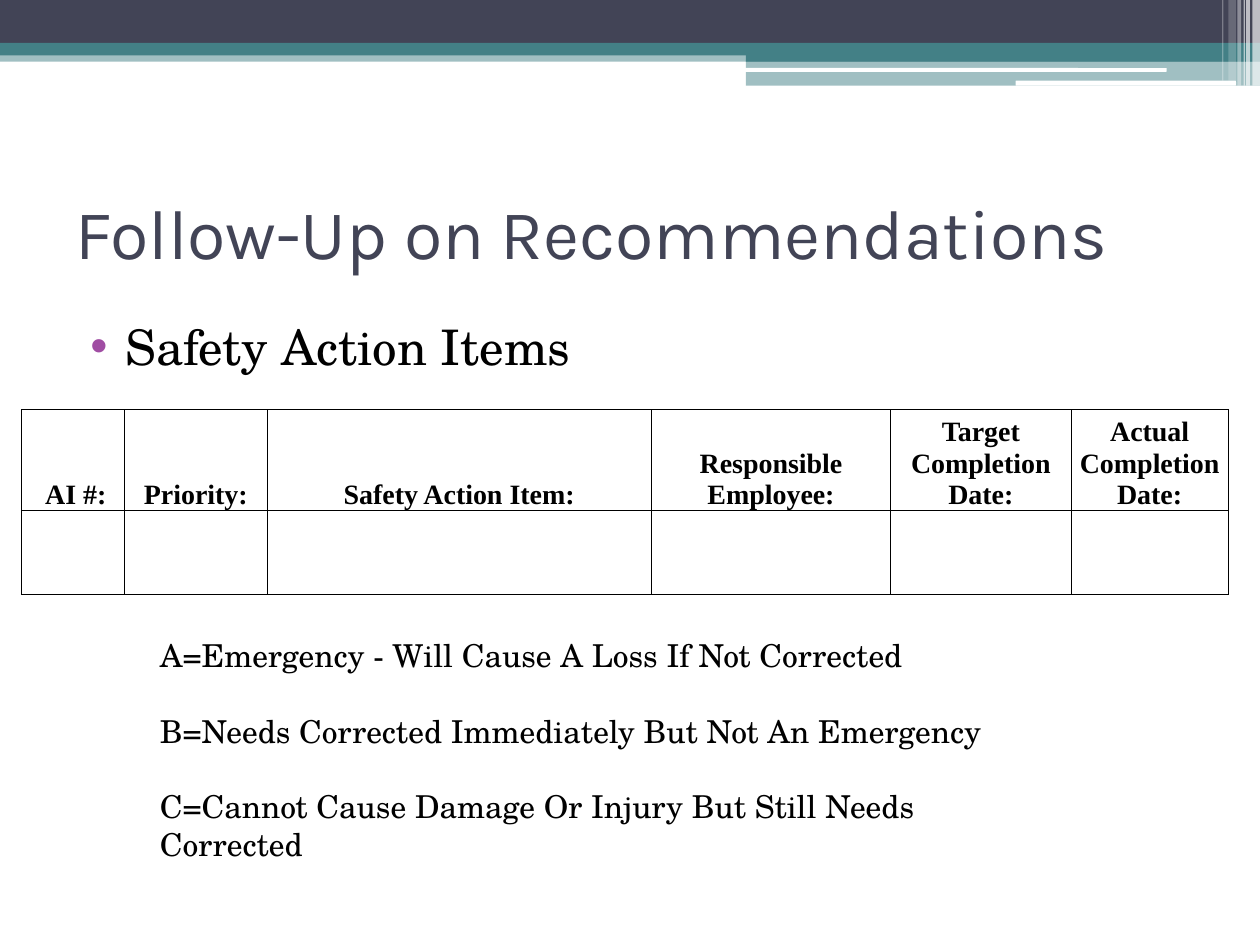
from dataclasses import dataclass

from pptx import Presentation
from pptx import util as u
from pptx.dml.color import RGBColor
from pptx.enum import shapes, text
from pptx.oxml.ns import qn
from lxml import etree


@dataclass(frozen=True)
class Theme:
    navy: str = "424456"
    teal: str = "438086"
    purple: str = "A04DA3"
    white: str = "FFFFFF"
    black: str = "000000"
    heading: str = "Karla"
    body: str = "TeX Gyre Schola"
    grid: str = "Times New Roman"
    title_size: int = 40
    topic_size: int = 28
    note_size: int = 18
    header_size: int = 16
    border: float = 0.5


THEME = Theme()
COLUMNS, ROWS = 100, 75
BANNER = [
    (0, 4, 100, 0.9, THEME.teal, 50),
    (0, 0, 100, 3.4, THEME.navy, 100),
    (0, 3.4, 100, 1, THEME.teal, 100),
    (59.2, 3.9, 40.8, 1, THEME.teal, 100),
    (59.2, 4.8, 40.8, 2, THEME.teal, 50),
]
HIGHLIGHTS = [(59.1, 5.4, 33.5, 0.3), (80.6, 6.4, 17.5, 0.4)]
STRIPES = [
    (99.4, 0.6, 6.8, 65),
    (98.9, 0.3, 6.8, 65),
    (98.7, 0.1, 6.8, 60),
    (98.2, 0.3, 6.8, 40),
    (97.5, 0.6, 6.4, 20),
    (97, 0.1, 6.4, 30),
]
ACTION_FIELDS = {
    " AI #:": 8.2,
    "Priority:": 11.3,
    "Safety Action Item:": 30.5,
    "Responsible Employee:": 19,
    "Target Completion Date:": 14.3,
    "Actual Completion Date:": 12.5,
}
PRIORITIES = [
    "A=Emergency - Will Cause A Loss If Not Corrected",
    "B=Needs Corrected Immediately But Not An Emergency",
    "C=Cannot Cause Damage Or Injury But Still Needs Corrected",
]


def apply(target, values):
    for name, value in values.items():
        setattr(target, name, value)


def add_node(parent, tag, **attributes):
    return etree.SubElement(parent, qn(tag), attributes)


class SlideBuilder:
    def __init__(self, theme):
        self.theme = theme
        self.deck = Presentation()
        apply(self.deck, {"slide_width": u.Inches(10), "slide_height": u.Inches(7.5)})
        self.slide = self.deck.slides.add_slide(self.deck.slide_layouts[5])

    def across(self, columns):
        return round(self.deck.slide_width * columns / COLUMNS)

    def down(self, rows):
        return round(self.deck.slide_height * rows / ROWS)

    def area(self, left, top, width, height):
        return self.across(left), self.down(top), self.across(width), self.down(height)

    def bar(self, left, top, width, height, color, opacity=100, rounded=False):
        kinds = shapes.MSO_SHAPE
        kind = kinds.ROUNDED_RECTANGLE if rounded else kinds.RECTANGLE
        bar = self.slide.shapes.add_shape(kind, *self.area(left, top, width, height))
        bar.shadow.inherit = False
        bar.line.fill.background()
        bar.fill.solid()
        bar.fill.fore_color.rgb = RGBColor.from_string(color)
        if opacity < 100:
            tint = bar._element.spPr.find(qn("a:solidFill"))[0]
            add_node(tint, "a:alpha", val=str(opacity * 1000))

    def add_words(self, paragraph, words, font, size, color, bold=False):
        run = paragraph.add_run()
        run.text = words
        apply(run.font, {"name": font, "size": u.Pt(size), "bold": bold})
        run.font.color.rgb = RGBColor.from_string(color)

    def title(self, words, *place):
        heading = self.slide.shapes.title
        apply(heading, dict(zip(("left", "top", "width", "height"), self.area(*place))))
        frame = heading.text_frame
        apply(frame, {"vertical_anchor": text.MSO_ANCHOR.MIDDLE, "word_wrap": True,
                      "auto_size": text.MSO_AUTO_SIZE.NONE})
        paragraph = frame.paragraphs[0]
        paragraph.alignment = text.PP_ALIGN.LEFT
        self.add_words(paragraph, words, self.theme.heading, self.theme.title_size,
                       self.theme.navy)

    def paragraphs(self, lines, size, gap, *place):
        frame = self.slide.shapes.add_textbox(*self.area(*place)).text_frame
        frame.word_wrap = True
        for index, words in enumerate(lines):
            paragraph = frame.add_paragraph() if index else frame.paragraphs[0]
            paragraph.space_before = u.Pt(gap if index else 0)
            self.add_words(paragraph, words, self.theme.body, size, self.theme.black)
        return frame

    def bullet(self, words, *place):
        topic = self.paragraphs([words], self.theme.topic_size, 0, *place).paragraphs[0]
        topic.space_before = u.Pt(3)
        properties = topic._p.get_or_add_pPr()
        properties.set("marL", str(self.across(4)))
        properties.set("indent", str(-self.across(2.8)))
        add_node(add_node(properties, "a:buClr"), "a:srgbClr", val=self.theme.purple)
        add_node(properties, "a:buFont", typeface="Arial")
        add_node(properties, "a:buChar", char="•")

    def outline(self, cell):
        properties = cell._tc.get_or_add_tcPr()
        for edge in ("a:lnL", "a:lnR", "a:lnT", "a:lnB"):
            line = add_node(properties, edge, w=str(int(u.Pt(self.theme.border))))
            add_node(add_node(line, "a:solidFill"), "a:srgbClr", val=self.theme.black)
        cell.fill.background()

    def form(self, fields, left, top, row_height, row_count=2):
        place = self.area(left, top, sum(fields.values()), row_height * row_count)
        table = self.slide.shapes.add_table(row_count, len(fields), *place).table
        apply(table, {"first_row": False, "horz_banding": False})
        for column, width in zip(table.columns, fields.values()):
            column.width = self.across(width)
        for cell in table.iter_cells():
            self.outline(cell)
        margins = dict.fromkeys(
            ("margin_left", "margin_right", "margin_top", "margin_bottom"), 0)
        for cell, label in zip(table.rows[0].cells, fields):
            apply(cell, {"vertical_anchor": text.MSO_ANCHOR.BOTTOM, **margins})
            paragraph = cell.text_frame.paragraphs[0]
            paragraph.alignment = text.PP_ALIGN.CENTER
            self.add_words(paragraph, label, self.theme.grid, self.theme.header_size,
                           self.theme.black, bold=True)


def main():
    page = SlideBuilder(THEME)
    for band in BANNER:
        page.bar(*band)
    for highlight in HIGHLIGHTS:
        page.bar(*highlight, THEME.white, rounded=True)
    for left, width, height, opacity in STRIPES:
        page.bar(left, 0, width, height, THEME.white, opacity)
    page.title("Follow-Up on Recommendations", 5, 12.5, 90, 11.7)
    page.bullet("Safety Action Items", 5, 24.6, 90, 7.1)
    page.form(ACTION_FIELDS, 1.7, 32.5, 6.7)
    page.paragraphs(PRIORITIES, THEME.note_size, 21.6, 11.7, 50, 70.8, 16.2)
    page.deck.save("out.pptx")


if __name__ == "__main__":
    main()
